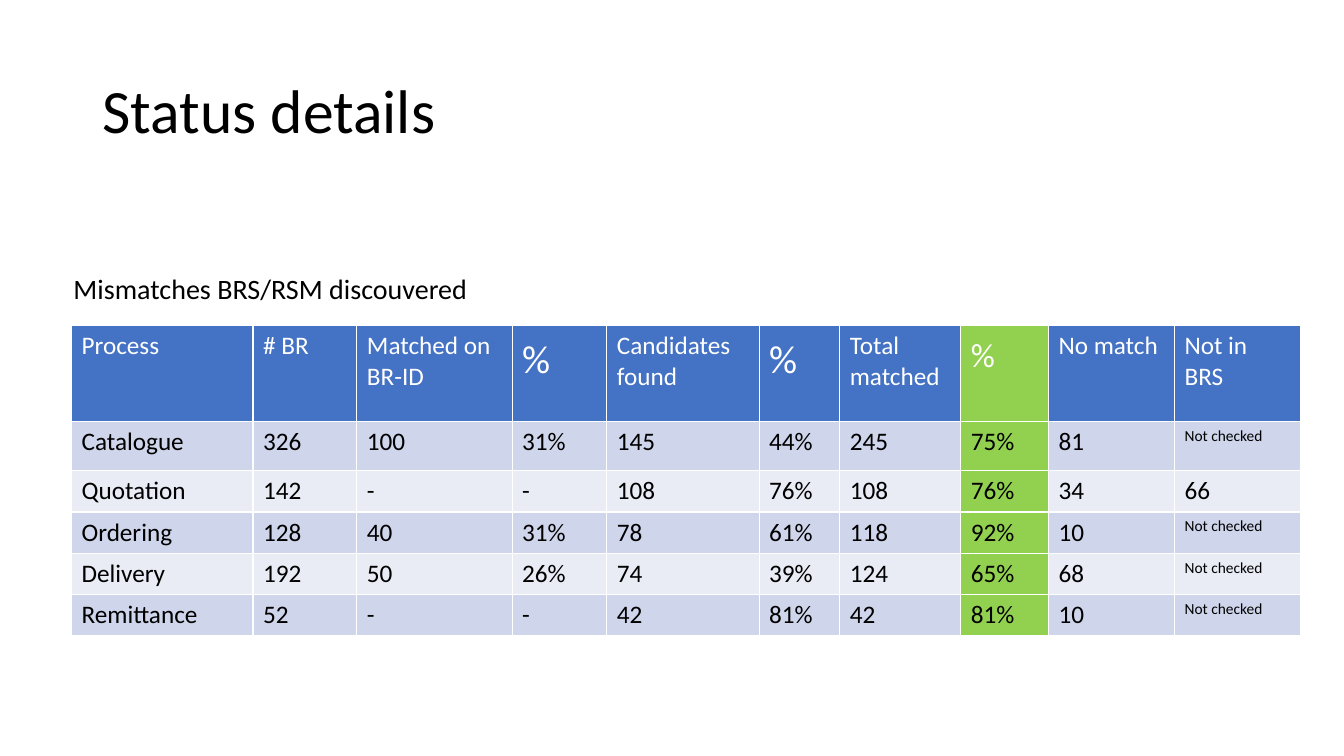
import pptx
import pptx.dml.color
import pptx.enum.text
import pptx.oxml
import pptx.oxml.ns
import pptx.util

Inches = pptx.util.Inches
Pt = pptx.util.Pt
RGBColor = pptx.dml.color.RGBColor

BLACK = RGBColor(0x00, 0x00, 0x00)
WHITE = RGBColor(0xFF, 0xFF, 0xFF)
HEADER_BLUE = RGBColor(0x44, 0x72, 0xC4)
BAND_DARK = RGBColor(0xCF, 0xD5, 0xEA)
BAND_LIGHT = RGBColor(0xE9, 0xEB, 0xF5)
HIGHLIGHT_GREEN = RGBColor(0x92, 0xD0, 0x50)

HIGHLIGHT_COLUMN = 7
COLUMN_WIDTHS = [1.8, 1.03, 1.54, 0.94, 1.51, 0.8, 1.2, 0.87, 1.25, 1.25]
ROW_HEIGHTS = [0.95, 0.49] + [0.41] * 4
ROWS = [
    ["Process", "# BR", "Matched on\nBR-ID", "%", "Candidates found", "%",
     "Total matched", "%", "No match", "Not in BRS"],
    ["Catalogue", "326", "100", "31%", "145", "44%", "245", "75%", "81", "Not checked"],
    ["Quotation", "142", "-", "-", "108", "76%", "108", "76%", "34", "66"],
    ["Ordering", "128", "40", "31%", "78", "61%", "118", "92%", "10", "Not checked"],
    ["Delivery", "192", "50", "26%", "74", "39%", "124", "65%", "68", "Not checked"],
    ["Remittance", "52", "-", "-", "42", "81%", "42", "81%", "10", "Not checked"],
]


def write_text(frame, text, size=18, color=BLACK, line_spacing=None, end_space=None):
    """Fill a text frame, one paragraph per line; end_space is the size of a closing space."""
    frame.word_wrap = True
    for index, line in enumerate(text.split("\n")):
        para = frame.add_paragraph() if index else frame.paragraphs[0]
        if line_spacing:
            para.line_spacing = line_spacing
        pieces = [(line, size)]
        if end_space:
            pieces.append((" ", end_space))
        for piece, piece_size in pieces:
            span = para.add_run()
            span.text = piece
            span.font.name = "Calibri"
            span.font.size = Pt(piece_size)
            span.font.bold = False
            span.font.color.rgb = color


def set_borders(cell, color=WHITE, width=1):
    properties = cell._tc.get_or_add_tcPr()
    for index, side in enumerate(("lnL", "lnR", "lnT", "lnB")):
        properties.insert(index, pptx.oxml.parse_xml(
            f'<a:{side} {pptx.oxml.ns.nsdecls("a")} w="{Pt(width)}">'
            f'<a:solidFill><a:srgbClr val="{color}"/></a:solidFill></a:{side}>'))


deck = pptx.Presentation()
deck.slide_width = Inches(13.33)
deck.slide_height = Inches(7.5)
page = deck.slides.add_slide(deck.slide_layouts[6])

title_box = page.shapes.add_textbox(Inches(0.92), Inches(0.4), Inches(11.5), Inches(1.45))
title_box.text_frame.vertical_anchor = pptx.enum.text.MSO_ANCHOR.MIDDLE
write_text(title_box.text_frame, "Status details", size=44, line_spacing=0.9)

table = page.shapes.add_table(
    len(ROWS), len(COLUMN_WIDTHS), Inches(0.71), Inches(3.23),
    Inches(sum(COLUMN_WIDTHS)), Inches(sum(ROW_HEIGHTS))).table
table.first_row = False
table.horz_banding = False
for column, width in zip(table.columns, COLUMN_WIDTHS):
    column.width = Inches(width)
for row, height in zip(table.rows, ROW_HEIGHTS):
    row.height = Inches(height)

for row_index, values in enumerate(ROWS):
    is_header = row_index == 0
    row_fill = HEADER_BLUE if is_header else (BAND_LIGHT, BAND_DARK)[row_index % 2]
    for column_index, value in enumerate(values):
        highlighted = column_index == HIGHLIGHT_COLUMN
        cell = table.cell(row_index, column_index)
        cell.fill.solid()
        cell.fill.fore_color.rgb = HIGHLIGHT_GREEN if highlighted else row_fill
        set_borders(cell)
        size, end_space = 18, None
        if value == "%":
            size, end_space = (24, 28) if highlighted else (28, 32)
        elif value == "Not checked":
            size = 11
        write_text(cell.text_frame, value, size=size, end_space=end_space,
                   color=WHITE if is_header else BLACK)

caption_box = page.shapes.add_textbox(Inches(0.63), Inches(2.64), Inches(11.79), Inches(0.44))
write_text(caption_box.text_frame, "Mismatches BRS/RSM discouvered", size=20)

deck.save("out.pptx")
